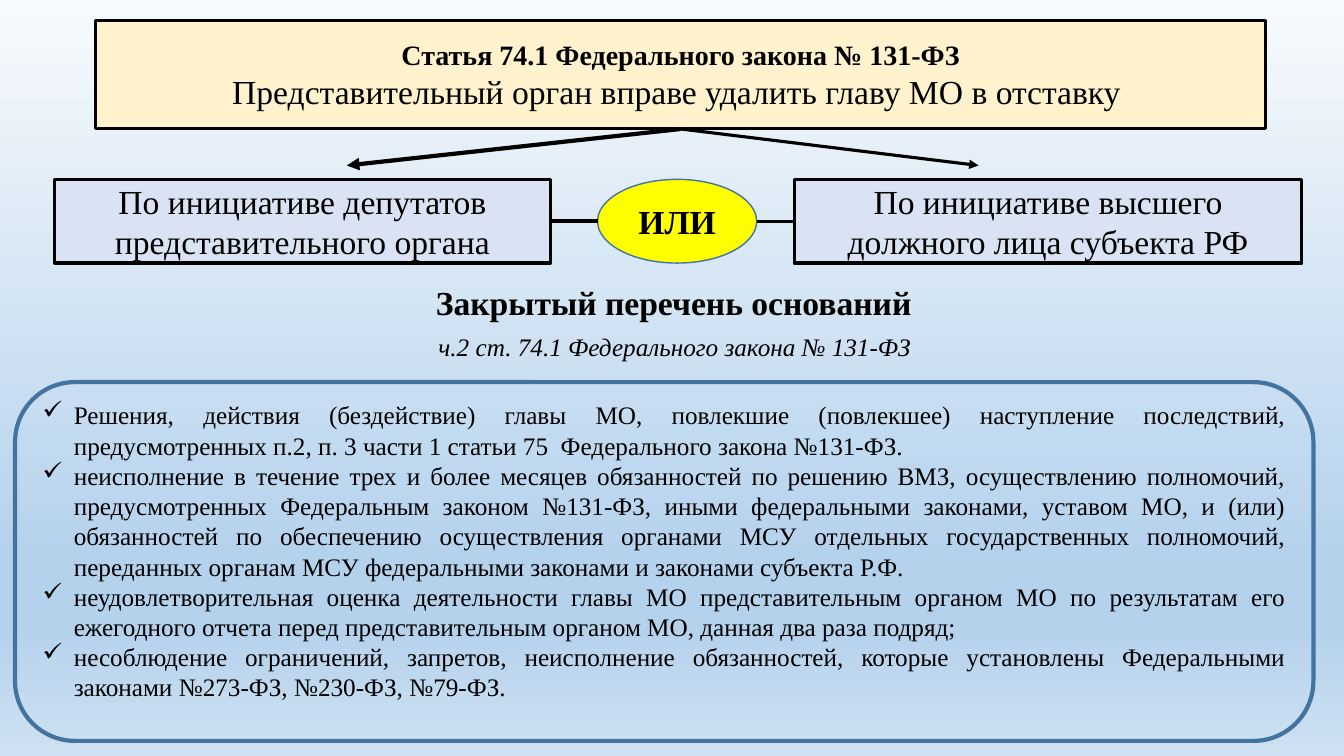
from dataclasses import dataclass

from lxml.etree import SubElement
from pptx import Presentation
from pptx.dml.color import RGBColor
from pptx.enum.shapes import MSO_CONNECTOR as Connector
from pptx.enum.shapes import MSO_SHAPE as Preset
from pptx.enum.text import MSO_ANCHOR as Anchor
from pptx.enum.text import PP_ALIGN as Align
from pptx.oxml import parse_xml
from pptx.oxml.ns import nsdecls, qn
from pptx.shapes.autoshape import Shape
from pptx.shapes.connector import Connector as ConnectorShape
from pptx.slide import Slide
from pptx.text.text import TextFrame
from pptx.util import Cm, Pt

FONT = "Times New Roman"
BLACK = RGBColor(0x00, 0x00, 0x00)
CREAM = RGBColor(0xFF, 0xF2, 0xCC)
PALE_BLUE = RGBColor(0xDA, 0xE3, 0xF3)
YELLOW = RGBColor(0xFF, 0xFF, 0x00)
STEEL_BLUE = RGBColor(0x43, 0x73, 0x9E)
SKY_TOP = RGBColor(0xF7, 0xFA, 0xFD)
SKY_DEEP = RGBColor(0xB5, 0xD2, 0xEC)
SKY_BOTTOM = RGBColor(0xCE, 0xE1, 0xF2)
SKY_STOPS = [(0, SKY_TOP), (74, SKY_DEEP), (83, SKY_DEEP), (100, SKY_BOTTOM)]

BOTTOM_SIDE, LEFT_SIDE, RIGHT_SIDE = 2, 1, 3
ROW_TOP, ROW_HEIGHT = 4.52, 2.11
ROW_MIDDLE = ROW_TOP + ROW_HEIGHT / 2
ARROW_END = 4.17
BULLET_INDENT = Cm(0.79)


@dataclass
class Line:
    text: str
    size: float = 24
    bold: bool = False
    italic: bool = False


@dataclass
class Box:
    """A filled shape with centred lines; lengths are in centimetres."""
    left: float
    top: float
    width: float
    height: float
    fill: RGBColor | None
    lines: list[Line]
    preset: Preset = Preset.RECTANGLE
    border: RGBColor = BLACK
    border_width: float = 2.25


HEADER = Box(2.41, 0.51, 29.49, 2.74, CREAM, [
    Line("Статья 74.1 Федерального закона № 131-ФЗ", 20, bold=True),
    Line("Представительный орган вправе удалить главу МО в отставку "),
])
DEPUTIES = Box(1.37, ROW_TOP, 12.5, ROW_HEIGHT, PALE_BLUE, [
    Line("По инициативе депутатов представительного органа"),
])
OFFICIAL = Box(20.02, ROW_TOP, 12.78, ROW_HEIGHT, PALE_BLUE, [
    Line("По инициативе высшего должного лица субъекта РФ"),
])
OR_OVAL = Box(15.06, ROW_TOP, 4.01, ROW_HEIGHT, YELLOW, [Line("ИЛИ", bold=True)],
              Preset.OVAL, STEEL_BLUE, 1)
GROUNDS_FRAME = Box(0.38, 9.63, 32.72, 9.04, None, [],
                    Preset.ROUNDED_RECTANGLE, STEEL_BLUE, 3)
HEADING = [
    Line("Закрытый перечень оснований ", bold=True),
    Line("ч.2 ст. 74.1 Федерального закона № 131-ФЗ ", 18, italic=True),
]
GROUNDS = [
    "Решения, действия (бездействие) главы МО, повлекшие (повлекшее) наступление "
    "последствий, предусмотренных п.2, п. 3 части 1 статьи 75  Федерального закона "
    "№131-ФЗ.",
    "неисполнение в течение трех и более месяцев обязанностей по решению ВМЗ, "
    "осуществлению полномочий, предусмотренных Федеральным законом №131-ФЗ, иными "
    "федеральными законами, уставом МО, и (или) обязанностей по обеспечению "
    "осуществления органами МСУ отдельных государственных полномочий, переданных "
    "органам МСУ федеральными законами и законами субъекта Р.Ф.",
    "неудовлетворительная оценка деятельности главы МО представительным органом МО "
    "по результатам его ежегодного отчета перед представительным органом МО, данная "
    "два раза подряд;",
    "несоблюдение ограничений, запретов, неисполнение обязанностей, которые "
    "установлены Федеральными законами №273-ФЗ, №230-ФЗ, №79-ФЗ.",
]


def paint_background(slide: Slide) -> None:
    stops = "".join(
        f'<a:gs pos="{percent * 1000}"><a:srgbClr val="{color}"/></a:gs>'
        for percent, color in SKY_STOPS
    )
    slide.background.fill.solid()
    properties = slide.background.fill._xPr
    properties.replace(properties[0], parse_xml(
        f'<a:gradFill {nsdecls("a")} rotWithShape="1"><a:gsLst>{stops}</a:gsLst>'
        '<a:lin ang="5400000" scaled="0"/></a:gradFill>'
    ))


def write_lines(frame: TextFrame, lines: list[Line], align: Align = Align.CENTER) -> None:
    frame.text = "\n".join(line.text for line in lines)
    for paragraph, line in zip(frame.paragraphs, lines):
        paragraph.alignment = align
        for run in paragraph.runs:
            run.font.name = FONT
            run.font.size = Pt(line.size)
            run.font.bold = line.bold
            run.font.italic = line.italic
            run.font.color.rgb = BLACK


def add_box(slide: Slide, box: Box) -> Shape:
    shape = slide.shapes.add_shape(
        box.preset, Cm(box.left), Cm(box.top), Cm(box.width), Cm(box.height))
    shape.shadow.inherit = False
    if box.fill is None:
        shape.fill.background()
    else:
        shape.fill.solid()
        shape.fill.fore_color.rgb = box.fill
    shape.line.color.rgb = box.border
    shape.line.width = Pt(box.border_width)
    shape.text_frame.word_wrap = True
    shape.text_frame.vertical_anchor = Anchor.MIDDLE
    write_lines(shape.text_frame, box.lines)
    return shape


def add_line(slide: Slide, end_x: float, end_y: float, width: float,
             start: Shape, side: int, arrow: bool = False) -> ConnectorShape:
    """Draw a black line from the middle of a rectangle's side to a point."""
    line = slide.shapes.add_connector(
        Connector.STRAIGHT, Cm(0), Cm(0), Cm(end_x), Cm(end_y))
    line.begin_connect(start, side)
    line.line.color.rgb = BLACK
    line.line.width = Pt(width)
    if arrow:
        SubElement(line.line._get_or_add_ln(), qn("a:tailEnd"), type="triangle")
    SubElement(line._element.spPr, qn("a:effectLst"))
    return line


def add_heading(slide: Slide) -> None:
    heading = slide.shapes.add_textbox(Cm(10.62), Cm(6.99), Cm(12.93), Cm(2.31))
    heading.text_frame.word_wrap = False
    write_lines(heading.text_frame, HEADING)
    heading.text_frame.paragraphs[1].space_before = Pt(6)


def add_grounds(slide: Slide) -> None:
    frame = add_box(slide, GROUNDS_FRAME).text_frame
    frame.vertical_anchor = Anchor.TOP
    frame.margin_top = Cm(0)
    write_lines(frame, [Line(text, 18) for text in GROUNDS], Align.JUSTIFY)
    for paragraph in frame.paragraphs:
        properties = paragraph._p.get_or_add_pPr()
        properties.set("marL", str(BULLET_INDENT))
        properties.set("indent", str(-BULLET_INDENT))
        SubElement(properties, qn("a:buFont"), typeface="Wingdings")
        SubElement(properties, qn("a:buChar"), char="ü")


def main() -> None:
    presentation = Presentation()
    presentation.slide_width = Cm(33.87)
    presentation.slide_height = Cm(19.05)
    slide = presentation.slides.add_slide(presentation.slide_layouts[6])
    paint_background(slide)

    header, deputies, official, _ = [
        add_box(slide, box) for box in (HEADER, DEPUTIES, OFFICIAL, OR_OVAL)]
    add_line(slide, 8.74, ARROW_END, 3, header, BOTTOM_SIDE, arrow=True)
    add_line(slide, 24.66, ARROW_END, 2.25, header, BOTTOM_SIDE, arrow=True)
    add_line(slide, OR_OVAL.left, ROW_MIDDLE, 3, deputies, RIGHT_SIDE)
    add_line(slide, OR_OVAL.left + OR_OVAL.width, ROW_MIDDLE, 2.25, official, LEFT_SIDE)

    add_heading(slide)
    add_grounds(slide)
    presentation.save("out.pptx")


if __name__ == "__main__":
    main()
